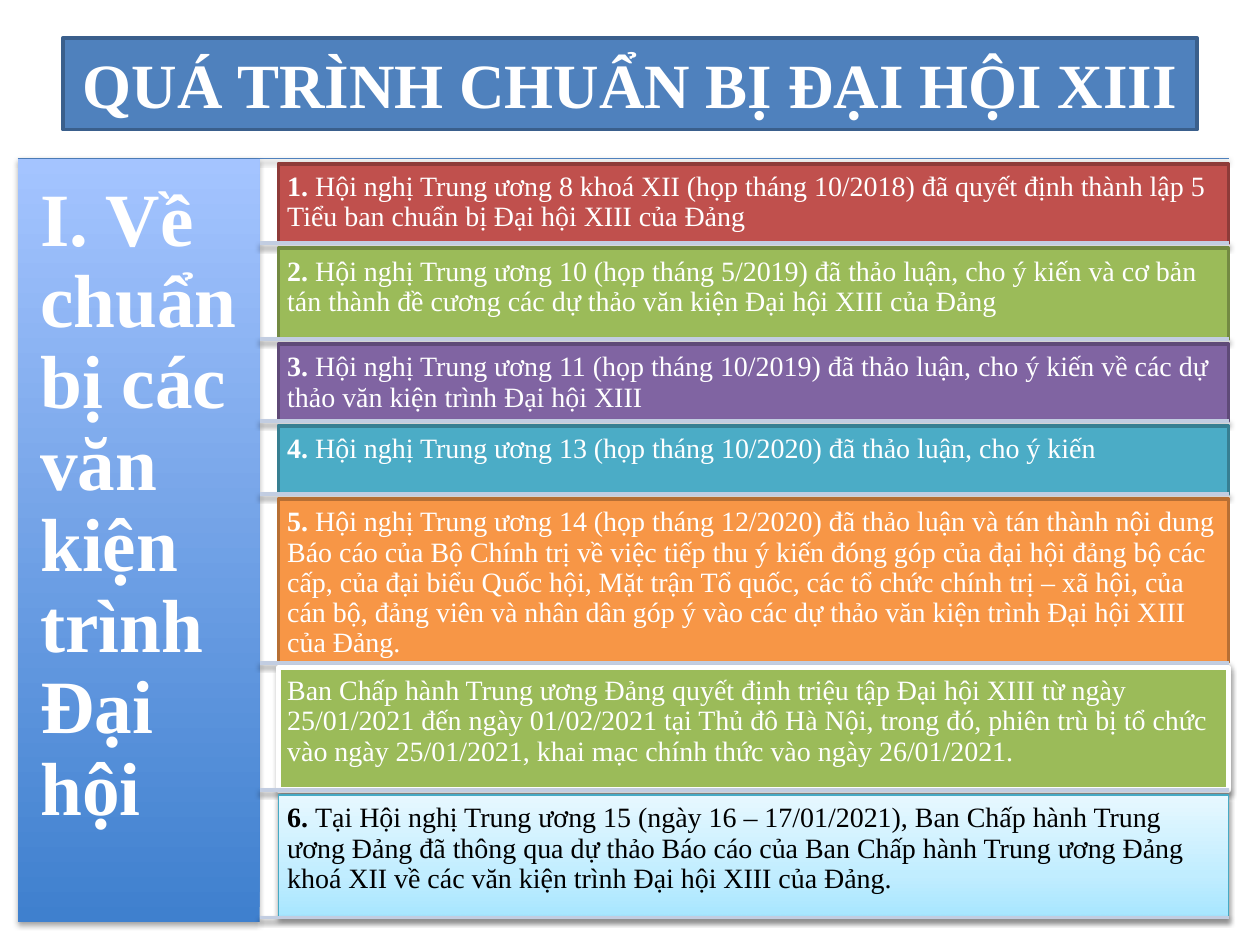
"""Build the slide on preparations for the Thirteenth Congress."""
from dataclasses import dataclass
from typing import Any, Optional

from pptx import Presentation
from pptx import util as u
from pptx.dml.color import RGBColor
from pptx.enum import shapes, text
from pptx.oxml import parse_xml
from pptx.oxml.ns import nsdecls

WHITE = RGBColor(0xFF, 0xFF, 0xFF)
BLACK = RGBColor(0, 0, 0)
BLUE = RGBColor(0x4F, 0x81, 0xBD)
NAVY = RGBColor(0x3A, 0x5F, 0x8C)
RED = RGBColor(0xC0, 0x50, 0x4D)
MAROON = RGBColor(0x8E, 0x3B, 0x39)
GREEN = RGBColor(0x9B, 0xBB, 0x59)
OLIVE = RGBColor(0x73, 0x8A, 0x42)
PURPLE = RGBColor(0x80, 0x64, 0xA2)
PLUM = RGBColor(0x5F, 0x4A, 0x78)
AQUA = RGBColor(0x4B, 0xAC, 0xC6)
TEAL = RGBColor(0x37, 0x7F, 0x92)
ORANGE = RGBColor(0xF7, 0x96, 0x46)
BROWN = RGBColor(0xB7, 0x6F, 0x34)
CYAN = RGBColor(0x46, 0xAA, 0xC5)
PALE = RGBColor(0xC2, 0xCD, 0xE1)
SIDE_FADE = ((0, RGBColor(0x3F, 0x80, 0xCE)), (100, RGBColor(0xA4, 0xC4, 0xFF)))
ROW_FADE = (
    (0, RGBColor(0xA7, 0xE6, 0xFF)),
    (35, RGBColor(0xC1, 0xED, 0xFF)),
    (100, RGBColor(0xE7, 0xF8, 0xFF)),
)

FONT = "Times New Roman"
LEFT, SPLIT, RIGHT = 0.14, 2.06, 9.75
TOP, ROW_LEFT, GAP = 1.26, 2.21, 0.04


@dataclass
class Shade:
    alpha: int
    dist: float


@dataclass
class Box:
    left: float
    top: float
    width: float
    height: float
    fill: Any
    edge: Optional[RGBColor] = None
    weight: float = 2
    shade: Optional[Shade] = None


@dataclass
class Label:
    body: str
    lead: str = ""
    size: float = 16
    color: RGBColor = WHITE
    bold: bool = False
    inset: float = 0.07


@dataclass
class Row:
    height: float
    fill: Any
    edge: RGBColor
    label: Label
    weight: float = 2
    shade: Optional[Shade] = None


SIDE_SHADE = Shade(35, 1.8)
ROW_SHADE = Shade(38, 1.6)

ROWS = [
    Row(0.63, RED, MAROON, Label(
        "Hội nghị Trung ương 8 khoá XII (họp tháng 10/2018) đã quyết định thành lập 5 "
        "Tiểu ban chuẩn bị Đại hội XIII của Đảng", "1. ")),
    Row(0.72, GREEN, OLIVE, Label(
        "Hội nghị Trung ương 10 (họp tháng 5/2019) đã thảo luận, cho ý kiến và cơ bản "
        "tán thành đề cương các dự thảo văn kiện Đại hội XIII của Đảng", "2. ")),
    Row(0.61, PURPLE, PLUM, Label(
        "Hội nghị Trung ương 11 (họp tháng 10/2019) đã thảo luận, cho ý kiến về các dự "
        "thảo văn kiện trình Đại hội XIII", "3. ")),
    Row(0.54, AQUA, TEAL, Label(
        "Hội nghị Trung ương 13 (họp tháng 10/2020) đã thảo luận, cho ý kiến", "4. ")),
    Row(1.3, ORANGE, BROWN, Label(
        "Hội nghị Trung ương 14 (họp tháng 12/2020) đã thảo luận và tán thành nội dung "
        "Báo cáo của Bộ Chính trị về việc tiếp thu ý kiến đóng góp của đại hội đảng bộ các "
        "cấp, của đại biểu Quốc hội, Mặt trận Tổ quốc, các tổ chức chính trị – xã hội, của "
        "cán bộ, đảng viên và nhân dân góp ý vào các dự thảo văn kiện trình Đại hội XIII "
        "của Đảng.", "5. ")),
    Row(0.97, GREEN, WHITE, Label(
        "Ban Chấp hành Trung ương Đảng quyết định triệu tập Đại hội XIII từ ngày "
        "25/01/2021 đến ngày 01/02/2021 tại Thủ đô Hà Nội, trong đó, phiên trù bị tổ chức "
        "vào ngày 25/01/2021, khai mạc chính thức vào ngày 26/01/2021."), 3, ROW_SHADE),
    Row(0.97, ROW_FADE, CYAN, Label(
        "Tại Hội nghị Trung ương 15 (ngày 16 – 17/01/2021), Ban Chấp hành Trung "
        "ương Đảng đã thông qua dự thảo Báo cáo của Ban Chấp hành Trung ương Đảng "
        "khoá XII về các văn kiện trình Đại hội XIII của Đảng.", "6. ", color=BLACK),
        0.75, ROW_SHADE),
]


def cast(item: Any, shade: Optional[Shade]) -> None:
    """Give the item this shadow, or none."""
    inner = "" if shade is None else (
        f'<a:outerShdw blurRad="{u.Pt(3.1)}" dist="{u.Pt(shade.dist)}" dir="5400000" '
        f'rotWithShape="0"><a:srgbClr val="000000"><a:alpha val="{shade.alpha * 1000}"/>'
        '</a:srgbClr></a:outerShdw>')
    item._element.spPr.append(
        parse_xml(f'<a:effectLst {nsdecls("a")}>{inner}</a:effectLst>'))


def fade(item: Any, stops: tuple) -> None:
    """Fill the item with a gradient that rises from the bottom."""
    marks = "".join(f'<a:gs pos="{pos * 1000}"><a:srgbClr val="{color}"/></a:gs>'
                    for pos, color in stops)
    item._element.spPr.prstGeom.addnext(parse_xml(
        f'<a:gradFill {nsdecls("a")} rotWithShape="1"><a:gsLst>{marks}</a:gsLst>'
        '<a:lin ang="16200000" scaled="0"/></a:gradFill>'))


def add_box(slide: Any, box: Box) -> Any:
    """Draw a rectangle."""
    item = slide.shapes.add_shape(
        shapes.MSO_SHAPE.RECTANGLE,
        *map(u.Inches, (box.left, box.top, box.width, box.height)))
    if isinstance(box.fill, RGBColor):
        item.fill.solid()
        item.fill.fore_color.rgb = box.fill
    else:
        fade(item, box.fill)
    if box.edge is None:
        item.line.fill.background()
    else:
        item.line.color.rgb = box.edge
        item.line.width = u.Pt(box.weight)
    cast(item, box.shade)
    return item


def write(item: Any, label: Label, anchor: Any = text.MSO_ANCHOR.TOP,
          align: Any = text.PP_ALIGN.LEFT, space: float = 0.9) -> None:
    """Put the label in the item."""
    frame = item.text_frame
    inset = u.Inches(label.inset)
    form = {"word_wrap": True, "vertical_anchor": anchor, "margin_left": inset,
            "margin_right": inset, "margin_top": inset, "margin_bottom": inset}
    for key, value in form.items():
        setattr(frame, key, value)
    para = frame.paragraphs[0]
    para.alignment, para.line_spacing = align, space
    for words, bold in ((label.lead, True), (label.body, label.bold)):
        if words:
            run = para.add_run()
            run.text = words
            for key, value in {"name": FONT, "size": u.Pt(label.size), "bold": bold}.items():
                setattr(run.font, key, value)
            run.font.color.rgb = label.color


def add_rule(slide: Any, left: float, top: float, color: RGBColor,
             weight: float, shade: Shade) -> None:
    """Draw a level line to the right edge."""
    rule = slide.shapes.add_connector(
        shapes.MSO_CONNECTOR.STRAIGHT, *map(u.Inches, (left, top, RIGHT, top)))
    rule.line.color.rgb = color
    rule.line.width = u.Pt(weight)
    cast(rule, shade)


def main() -> None:
    """Build and save the deck."""
    deck = Presentation()
    deck.slide_width, deck.slide_height = u.Inches(10), u.Inches(7.5)
    slide = deck.slides.add_slide(deck.slide_layouts[6])
    title = add_box(slide, Box(0.5, 0.3, 9, 0.73, BLUE, NAVY))
    write(title, Label("QUÁ TRÌNH CHUẨN BỊ ĐẠI HỘI XIII", size=36, bold=True, inset=0.05),
          text.MSO_ANCHOR.MIDDLE, text.PP_ALIGN.CENTER, 1.0)
    add_rule(slide, LEFT, TOP, BLUE, 0.75, SIDE_SHADE)
    side = add_box(slide, Box(LEFT, TOP, SPLIT - LEFT, 6.06, SIDE_FADE, shade=SIDE_SHADE))
    write(side, Label("I. Về chuẩn bị các văn kiện trình Đại hội",
                      size=43, bold=True, inset=0.18))
    top = TOP
    for row in ROWS:
        top += GAP
        item = add_box(slide, Box(ROW_LEFT, top, RIGHT - ROW_LEFT, row.height, row.fill,
                                  row.edge, row.weight, row.shade))
        write(item, row.label)
        top += row.height
        add_rule(slide, SPLIT, top, PALE, 2, ROW_SHADE)
    deck.save("out.pptx")


if __name__ == "__main__":
    main()
